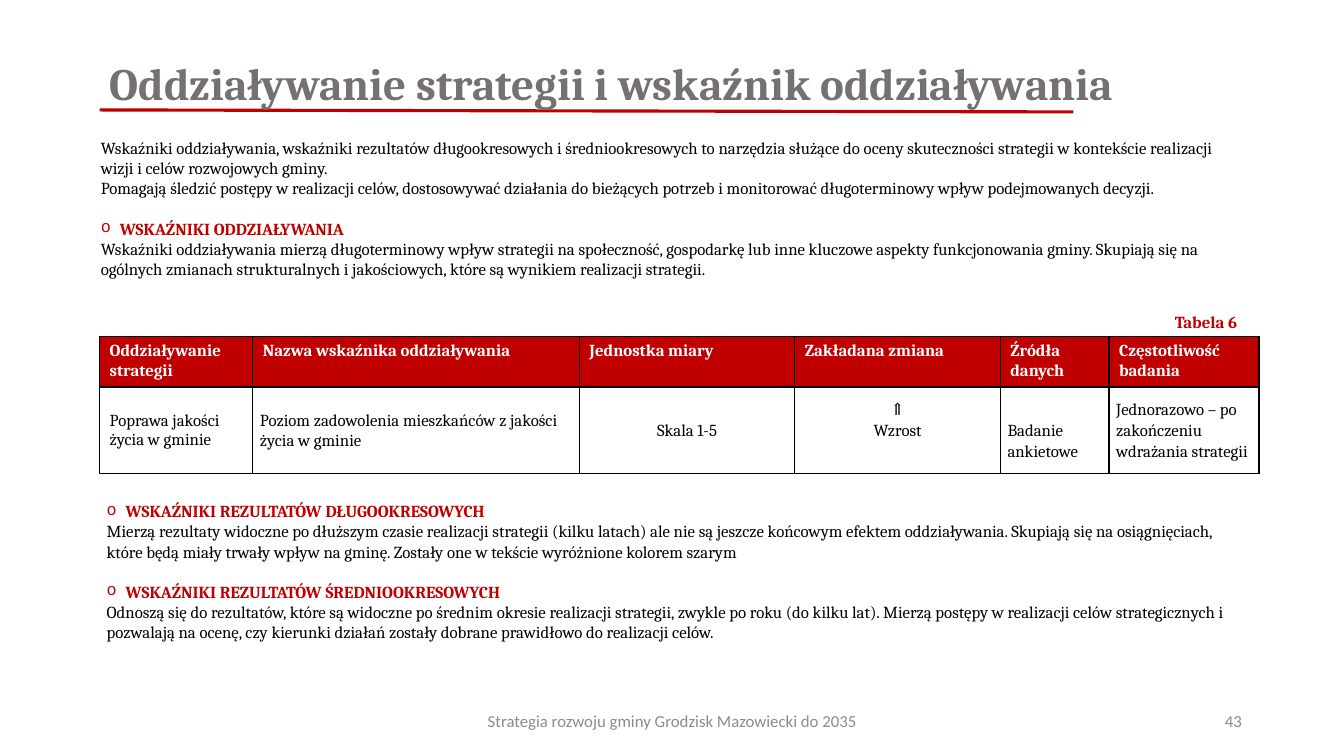
import pptx
import pptx.dml.color
import pptx.enum.shapes
import pptx.enum.text
import pptx.oxml
import pptx.oxml.ns
import pptx.util
from pptx.util import Cm

COLOURS = {"red": "C00000", "grey": "767171", "footer": "8C8C8C",
           "black": "000000", "white": "FFFFFF"}
ALIGN = pptx.enum.text.PP_ALIGN
ANCHOR = pptx.enum.text.MSO_ANCHOR
SECTION_GAP = 14.3
ROW_LINE = 0.53  # height of one table text line, cm


def colour(name):
    return pptx.dml.color.RGBColor.from_string(COLOURS[name])


def add_xml(parent, markup, index=None):
    namespace = pptx.oxml.ns.nsdecls("a")
    element = pptx.oxml.parse_xml(markup.replace("NS", namespace, 1))
    parent.insert(len(parent) if index is None else index, element)


def write(para, text, size=12, font="Cambria", ink="black", bold=False,
          align=ALIGN.LEFT, spacing=None, before=0, bullet=False):
    para.alignment = align
    para.space_before = pptx.util.Pt(before)
    if spacing:
        para.line_spacing = spacing
    if bullet:
        properties = para._p.get_or_add_pPr()
        properties.set("marL", str(Cm(0.48)))
        properties.set("indent", str(Cm(-0.48)))
        add_xml(properties, '<a:buFont NS typeface="Courier New"/>')
        add_xml(properties, '<a:buChar NS char="o"/>')
    span = para.add_run()
    span.text = text
    span.font.size = pptx.util.Pt(size)
    span.font.name = font
    span.font.bold = bold
    span.font.color.rgb = colour(ink)


def write_all(frame, entries):
    """Fill a text frame with (text, format) pairs, one per paragraph."""
    for number, (text, style) in enumerate(entries):
        para = frame.add_paragraph() if number else frame.paragraphs[0]
        write(para, text, **style)


def add_text(page, left, top, width, height, entries, anchor=ANCHOR.TOP):
    box = page.shapes.add_textbox(Cm(left), Cm(top), Cm(width), Cm(height))
    box.text_frame.word_wrap = True
    box.text_frame.vertical_anchor = anchor
    write_all(box.text_frame, entries)


def heading(text, before=0):
    return text, {"ink": "red", "bold": True, "bullet": True, "before": before}


def add_rule(page):
    rule = page.shapes.add_connector(
        pptx.enum.shapes.MSO_CONNECTOR.STRAIGHT,
        Cm(2.51), Cm(2.77), Cm(27.05), Cm(2.82))
    rule.line.color.rgb = colour("red")
    rule.line.width = pptx.util.Pt(2.25)
    add_xml(rule._element.spPr, "<a:effectLst NS/>")


def add_borders(cell):
    properties = cell._tc.get_or_add_tcPr()
    for index, side in enumerate("LRTB"):
        add_xml(properties,
                f'<a:ln{side} NS w="12700"><a:solidFill><a:srgbClr '
                f'val="{COLOURS["black"]}"/></a:solidFill></a:ln{side}>', index)


def add_indicator_table(page):
    # Header, body lines, alignment, blank lines above and below, width
    columns = [
        ("Oddziaływanie strategii", ["Poprawa jakości życia w gminie"],
         ALIGN.LEFT, 0, 0, 3.86),
        ("Nazwa wskaźnika oddziaływania",
         ["Poziom zadowolenia mieszkańców z jakości życia w gminie"],
         ALIGN.LEFT, 0, 0, 8.23),
        ("Jednostka miary", ["Skala 1-5"], ALIGN.CENTER, 0, 0, 5.43),
        ("Zakładana zmiana", ["⇑", "Wzrost"], ALIGN.CENTER, 0, 1, 5.18),
        ("Źródła danych", ["Badanie ankietowe"], ALIGN.LEFT, 1, 0, 2.74),
        ("Częstotliwość badania",
         ["Jednorazowo – po zakończeniu wdrażania strategii"],
         ALIGN.LEFT, 0, 0, 3.78),
    ]
    table = page.shapes.add_table(2, len(columns), Cm(2.51), Cm(8.48),
                                  Cm(29.22), Cm(3.42)).table
    table.horz_banding = False
    table.first_row = False
    table.rows[0].height, table.rows[1].height = Cm(1.24), Cm(2.18)

    for index, (title, lines, align, above, below, width) in enumerate(columns):
        table.columns[index].width = Cm(width)
        header, body = table.cell(0, index), table.cell(1, index)
        header.fill.solid()
        header.fill.fore_color.rgb = colour("red")
        write_all(header.text_frame, [(title, {"ink": "white", "bold": True})])
        body.fill.background()
        body.vertical_anchor = ANCHOR.MIDDLE
        spacing = None
        if index:
            spacing = 1.07
            body.margin_left = body.margin_right = Cm(0.18)
            body.margin_top = Cm(above * ROW_LINE)
            body.margin_bottom = Cm(below * ROW_LINE)
        write_all(body.text_frame,
                  [(line, {"align": align, "spacing": spacing}) for line in lines])
        add_borders(header)
        add_borders(body)


def main():
    deck = pptx.Presentation()
    deck.slide_width, deck.slide_height = Cm(33.87), Cm(19.05)
    page = deck.slides.add_slide(deck.slide_layouts[6])

    # Title with its underline
    add_rule(page)
    add_text(page, 2.51, 0, 29.21, 3.68, [
        ("Oddziaływanie strategii i wskaźnik oddziaływania",
         {"size": 32, "ink": "grey", "bold": True,
          "spacing": pptx.util.Pt(52.8)})], ANCHOR.MIDDLE)

    # Introduction
    add_text(page, 2.29, 3.35, 29.31, 4.37, [
        ("Wskaźniki oddziaływania, wskaźniki rezultatów długookresowych i "
         "średniookresowych to narzędzia służące do oceny skuteczności strategii "
         "w kontekście realizacji wizji i celów rozwojowych gminy.", {}),
        ("Pomagają śledzić postępy w realizacji celów, dostosowywać działania do "
         "bieżących potrzeb i monitorować długoterminowy wpływ podejmowanych "
         "decyzji.", {}),
        heading("WSKAŹNIKI ODDZIAŁYWANIA", SECTION_GAP),
        ("Wskaźniki oddziaływania mierzą długoterminowy wpływ strategii na "
         "społeczność, gospodarkę lub inne kluczowe aspekty funkcjonowania gminy. "
         "Skupiają się na ogólnych zmianach strukturalnych i jakościowych, które "
         "są wynikiem realizacji strategii.", {})])

    # Table and its label
    add_text(page, 29.36, 7.72, 4.4, 0.76,
             [("Tabela 6", {"ink": "red", "bold": True})])
    add_indicator_table(page)

    # Result indicators
    add_text(page, 2.44, 12.5, 29.31, 3.84, [
        heading("WSKAŹNIKI REZULTATÓW DŁUGOOKRESOWYCH"),
        ("Mierzą rezultaty widoczne po dłuższym czasie realizacji strategii (kilku "
         "latach) ale nie są jeszcze końcowym efektem oddziaływania. Skupiają się "
         "na osiągnięciach, które będą miały trwały wpływ na gminę. Zostały one w "
         "tekście wyróżnione kolorem szarym", {}),
        heading("WSKAŹNIKI REZULTATÓW ŚREDNIOOKRESOWYCH", SECTION_GAP),
        ("Odnoszą się do rezultatów, które są widoczne po średnim okresie "
         "realizacji strategii, zwykle po roku (do kilku lat). Mierzą postępy w "
         "realizacji celów strategicznych i pozwalają na ocenę, czy kierunki "
         "działań zostały dobrane prawidłowo do realizacji celów.", {})])

    # Footer and page number
    footer = {"font": "Calibri", "ink": "footer"}
    add_text(page, 11.23, 17.65, 11.43, 1.02,
             [("Strategia rozwoju gminy Grodzisk Mazowiecki do 2035",
               {**footer, "align": ALIGN.CENTER})], ANCHOR.MIDDLE)
    add_text(page, 23.93, 17.65, 7.62, 1.02,
             [("43", {**footer, "align": ALIGN.RIGHT})], ANCHOR.MIDDLE)

    deck.save("out.pptx")


if __name__ == "__main__":
    main()
